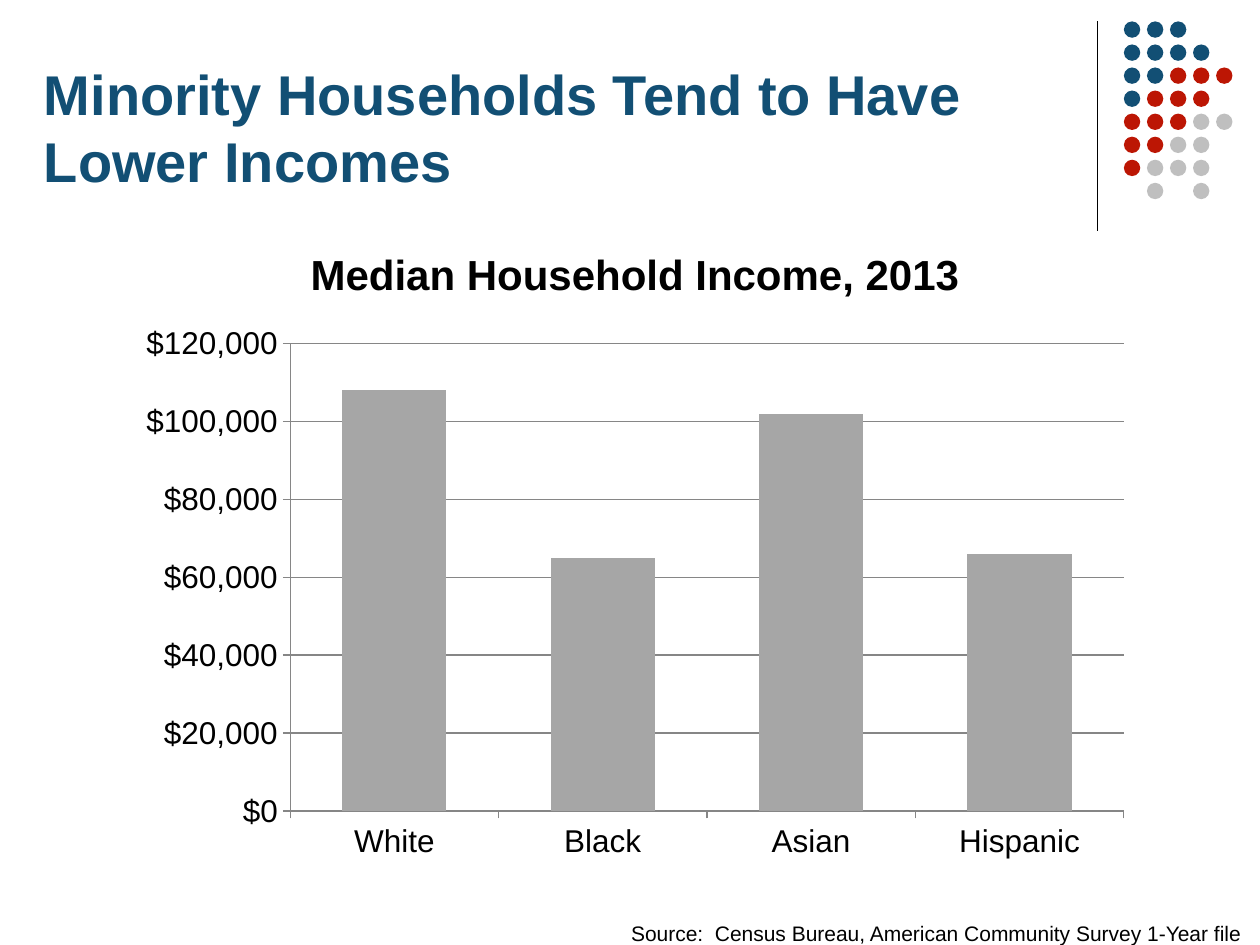
from dataclasses import dataclass

from lxml import etree
from pptx import Presentation
from pptx.chart.data import CategoryChartData
from pptx.dml.color import RGBColor
from pptx.enum.chart import XL_CHART_TYPE, XL_TICK_MARK
from pptx.enum.shapes import MSO_CONNECTOR, MSO_SHAPE
from pptx.enum.text import MSO_ANCHOR
from pptx.oxml.ns import qn
from pptx.util import Inches, Pt

COLUMN = XL_CHART_TYPE.COLUMN_CLUSTERED
OUTSIDE = XL_TICK_MARK.OUTSIDE
STRAIGHT = MSO_CONNECTOR.STRAIGHT
OVAL = MSO_SHAPE.OVAL
TOP, BOTTOM = MSO_ANCHOR.TOP, MSO_ANCHOR.BOTTOM


@dataclass(frozen=True)
class Theme:
    font: str = "Arial"
    blue: RGBColor = RGBColor(0x12, 0x4F, 0x74)
    red: RGBColor = RGBColor(0xBC, 0x16, 0x04)
    light: RGBColor = RGBColor(0xBF, 0xBF, 0xBF)
    bar: RGBColor = RGBColor(0xA6, 0xA6, 0xA6)
    axis: RGBColor = RGBColor(0x86, 0x86, 0x86)
    black: RGBColor = RGBColor(0, 0, 0)
    title: Pt = Pt(32)
    chart_title: Pt = Pt(24)
    label: Pt = Pt(18)
    source: Pt = Pt(12)


THEME = Theme()

DOT_ROWS = ["BBB", "BBBB", "BBRRR", "BRRR", "RRRGG", "RRGG", "RGGG", " G G"]
DOT_COLORS = {"B": THEME.blue, "R": THEME.red, "G": THEME.light}
DOT_LEFT, DOT_TOP, DOT_STEP, DOT_SIZE = 8.92, 0.17, 0.183, 0.13

INCOMES = {"White": 108000, "Black": 65000, "Asian": 102000, "Hispanic": 66000}


def style_font(font, size, color=THEME.black, bold=False):
    font.name = THEME.font
    font.size = size
    font.bold = bold
    font.color.rgb = color


def add_text(s, box, text, size, color=THEME.black, bold=False, anchor=TOP, wrap=True):
    tf = s.shapes.add_textbox(*map(Inches, box)).text_frame
    tf.word_wrap = wrap
    tf.vertical_anchor = anchor
    p = tf.paragraphs[0]
    p.text = text
    style_font(p.font, size, color, bold)


def add_rule(s, x, top, bottom):
    line = s.shapes.add_connector(STRAIGHT, *map(Inches, (x, top, x, bottom)))
    line.line.color.rgb = THEME.black
    line.line.width = Pt(0.75)
    etree.SubElement(line._element.spPr, qn("a:effectLst"))


def add_dots(s):
    """Draw the corner ornament, one letter of DOT_ROWS per dot."""
    for row, letters in enumerate(DOT_ROWS):
        for col, letter in enumerate(letters):
            if letter not in DOT_COLORS:
                continue
            x, y = DOT_LEFT + col * DOT_STEP, DOT_TOP + row * DOT_STEP
            sp = s.shapes.add_shape(OVAL, *map(Inches, (x, y, DOT_SIZE, DOT_SIZE)))
            sp.shadow.inherit = False
            sp.fill.solid()
            sp.fill.fore_color.rgb = DOT_COLORS[letter]
            sp.line.fill.background()


def style_line(line):
    line.color.rgb = THEME.axis
    line.width = Pt(0.75)


def add_income_chart(s, box):
    data = CategoryChartData()
    data.categories = list(INCOMES)
    data.add_series("Series 1", list(INCOMES.values()))
    chart = s.shapes.add_chart(COLUMN, *map(Inches, box), data).chart
    style_font(chart.font, THEME.label)
    chart.has_legend = False

    chart.has_title = True
    p = chart.chart_title.text_frame.paragraphs[0]
    p.text = "Median Household Income, 2013"
    style_font(p.font, THEME.chart_title, bold=True)
    chart.chart_title.include_in_layout = False

    plot = chart.plots[0]
    plot.gap_width = 100
    plot.vary_by_categories = False
    fill = plot.series[0].format.fill
    fill.solid()
    fill.fore_color.rgb = THEME.bar

    for axis in (chart.category_axis, chart.value_axis):
        axis.major_tick_mark = OUTSIDE
        style_line(axis.format.line)
    values = chart.value_axis
    values.minimum_scale, values.maximum_scale, values.major_unit = 0, 120000, 20000
    values.has_major_gridlines = True
    style_line(values.major_gridlines.format.line)
    values.tick_labels.number_format = '"$"#,##0'
    values.tick_labels.number_format_is_linked = False


def main():
    prs = Presentation()
    prs.slide_width, prs.slide_height = Inches(10), Inches(7.5)
    s = prs.slides.add_slide(prs.slide_layouts[6])
    add_rule(s, 8.71, 0.17, 1.83)
    add_dots(s)
    add_text(s, (0.25, 0.17, 8.42, 1.42), "Minority Households Tend to Have Lower Incomes",
             THEME.title, THEME.blue, bold=True, anchor=BOTTOM)
    add_text(s, (4.91, 7.26, 5.09, 0.3),
             "Source:  Census Bureau, American Community Survey 1-Year file",
             THEME.source, wrap=False)
    add_income_chart(s, (1, 1.75, 8.08, 5.17))
    prs.save("out.pptx")


if __name__ == "__main__":
    main()
